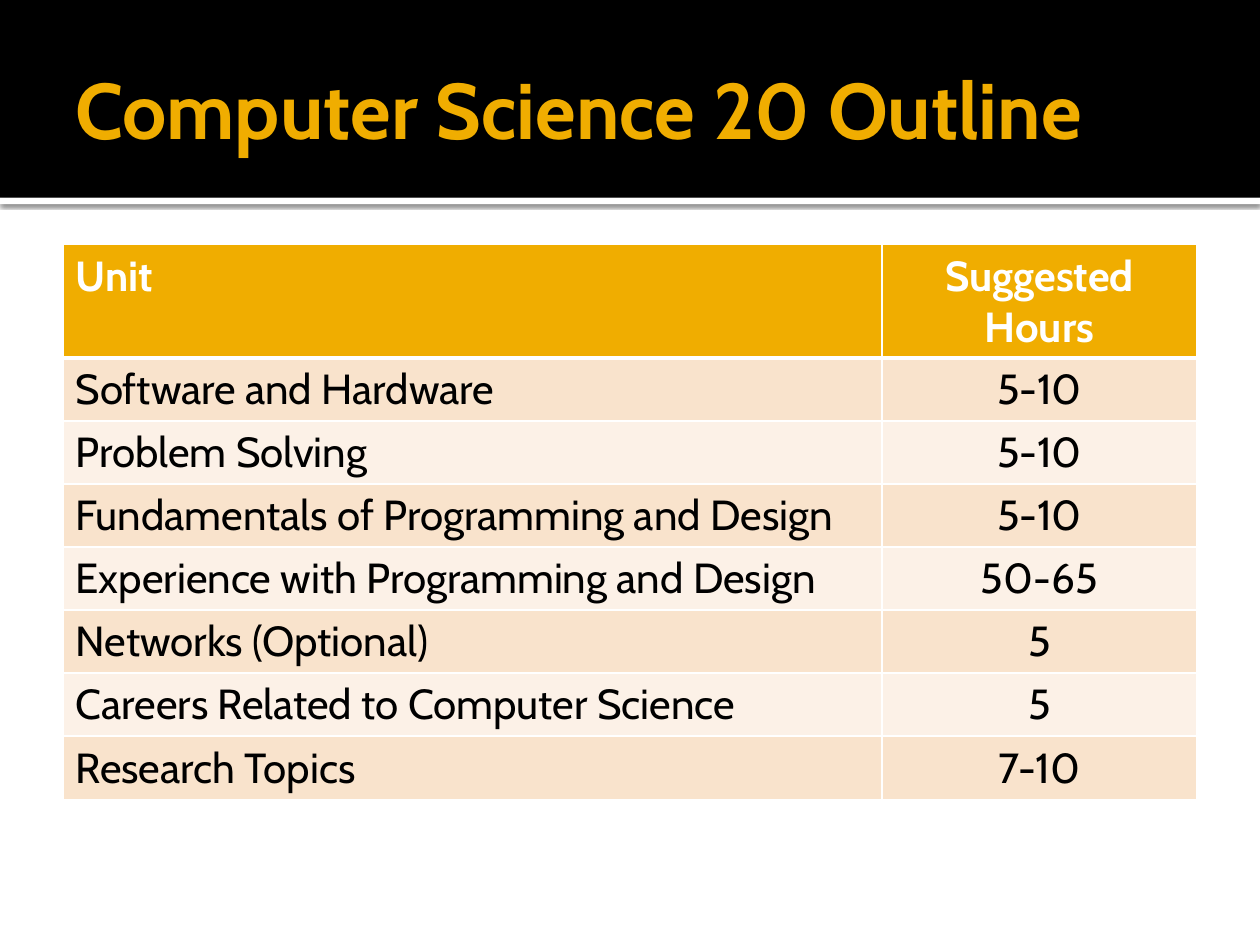
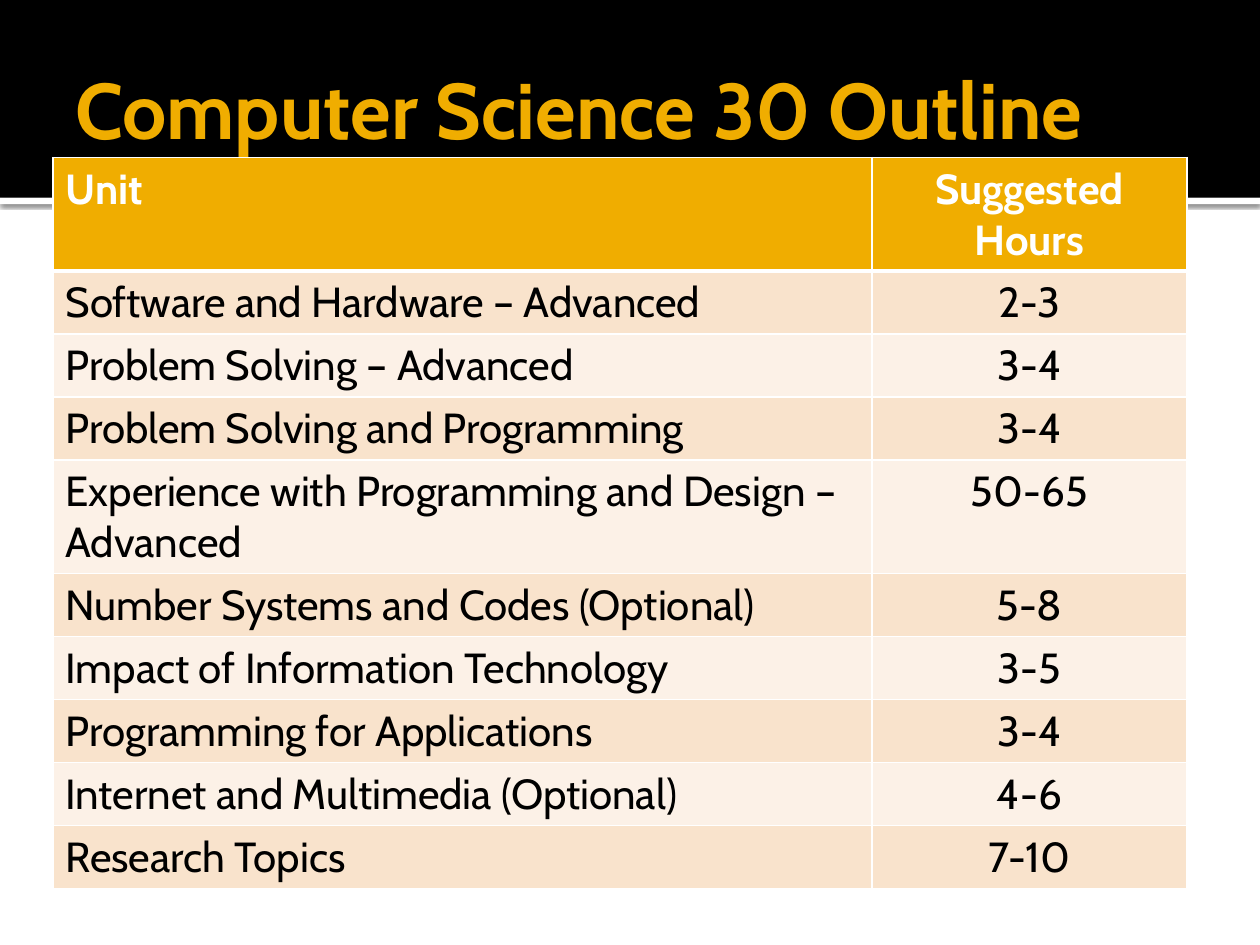
from lxml.etree import SubElement
from pptx import Presentation
from pptx.dml.color import RGBColor
from pptx.enum.shapes import MSO_SHAPE
from pptx.enum.text import MSO_ANCHOR, PP_ALIGN
from pptx.oxml.ns import qn
from pptx.util import Pt

SCALE = 9144
FONT = "Cabin"
GOLD, BLACK, WHITE = "F0AD00", "000000", "FFFFFF"
BANDS = ["F9E3CC", "FCF1E7"]
HEAD = ("Unit", "Suggested Hours")
COLS = [650, 250]
ROW, TALL = 50, 90

BASIC = [
    ("Software and Hardware", "5-10"),
    ("Problem Solving", "5-10"),
    ("Fundamentals of Programming and Design", "5-10"),
    ("Experience with Programming and Design", "50-65"),
    ("Networks (Optional)", "5"),
    ("Careers Related to Computer Science", "5"),
    ("Research Topics", "7-10"),
]
ADVANCED = [
    ("Software and Hardware – Advanced", "2-3"),
    ("Problem Solving – Advanced", "3-4"),
    ("Problem Solving and Programming", "3-4"),
    ("Experience with Programming and Design – Advanced", "50-65"),
    ("Number Systems and Codes (Optional)", "5-8"),
    ("Impact of Information Technology", "3-5"),
    ("Programming for Applications", "3-4"),
    ("Internet and Multimedia (Optional)", "4-6"),
    ("Research Topics", "7-10"),
]


def px(*sizes):
    return [size * SCALE for size in sizes]


def paint(fill, color):
    fill.solid()
    fill.fore_color.rgb = RGBColor.from_string(color)


def write(para, text, size, color, bold):
    run = para.add_run()
    run.text = text
    run.font.name = FONT
    run.font.size = Pt(size)
    run.font.bold = bold
    run.font.color.rgb = RGBColor.from_string(color)


def add_band(slide, top, height, color):
    band = slide.shapes.add_shape(MSO_SHAPE.RECTANGLE, *px(0, top, 1000, height))
    paint(band.fill, color)
    band.line.fill.background()
    band.shadow.inherit = False
    return band


def add_glow(shape):
    effects = shape._element.spPr.find(qn("a:effectLst"))
    shadow = SubElement(effects, qn("a:outerShdw"), blurRad=str(Pt(2.5)),
                        dist=str(Pt(0.8)), dir="5400000", algn="t", rotWithShape="0")
    color = SubElement(shadow, qn("a:srgbClr"), val=BLACK)
    SubElement(color, qn("a:alpha"), val="60000")


def add_title(slide, text):
    frame = slide.shapes.add_textbox(*px(50, 17, 900, 137)).text_frame
    frame.word_wrap = True
    frame.vertical_anchor = MSO_ANCHOR.MIDDLE
    frame.margin_left, frame.margin_right, frame.margin_top, frame.margin_bottom = px(10, 5, 5, 5)
    write(frame.paragraphs[0], text, 45, GOLD, True)


def add_edge(cell, side, width):
    line = SubElement(cell._tc.get_or_add_tcPr(), qn(f"a:ln{side}"), w=str(Pt(width)))
    fill = SubElement(line, qn("a:solidFill"))
    SubElement(fill, qn("a:srgbClr"), val=WHITE)


def add_cell(cell, text, row, col):
    head = row == 0
    widths = {"L": 1, "R": 1, "T": 3 if row == 1 else 1, "B": 3 if head else 1}
    for side, width in widths.items():
        add_edge(cell, side, width)
    paint(cell.fill, GOLD if head else BANDS[(row - 1) % 2])
    para = cell.text_frame.paragraphs[0]
    para.alignment = PP_ALIGN.CENTER if col else PP_ALIGN.LEFT
    write(para, text, 24, WHITE if head else BLACK, head)


def add_grid(slide, left, top, units):
    rows = [HEAD, *units]
    heights = [TALL if row is HEAD or len(row[0]) > 45 else ROW for row in rows]
    box = px(left, top, sum(COLS), sum(heights))
    table = slide.shapes.add_table(len(rows), len(COLS), *box).table
    table.first_row = table.horz_banding = False
    for col, width in zip(table.columns, px(*COLS)):
        col.width = width
    for line, height in zip(table.rows, px(*heights)):
        line.height = height
    for r, row in enumerate(rows):
        for c, text in enumerate(row):
            add_cell(table.cell(r, c), text, r, c)


def add_page(deck, title, left, top, units):
    slide = deck.slides.add_slide(deck.slide_layouts[6])
    paint(slide.background.fill, WHITE)
    add_glow(add_band(slide, 157, 5, WHITE))
    add_band(slide, 0, 157, BLACK)
    add_title(slide, title)
    add_grid(slide, left, top, units)


def main():
    deck = Presentation()
    deck.slide_width, deck.slide_height = px(1000, 750)
    add_page(deck, "Computer Science 20 Outline", 50, 194, BASIC)
    add_page(deck, "Computer Science 30 Outline", 42, 125, ADVANCED)
    deck.save("out.pptx")


if __name__ == "__main__":
    main()
